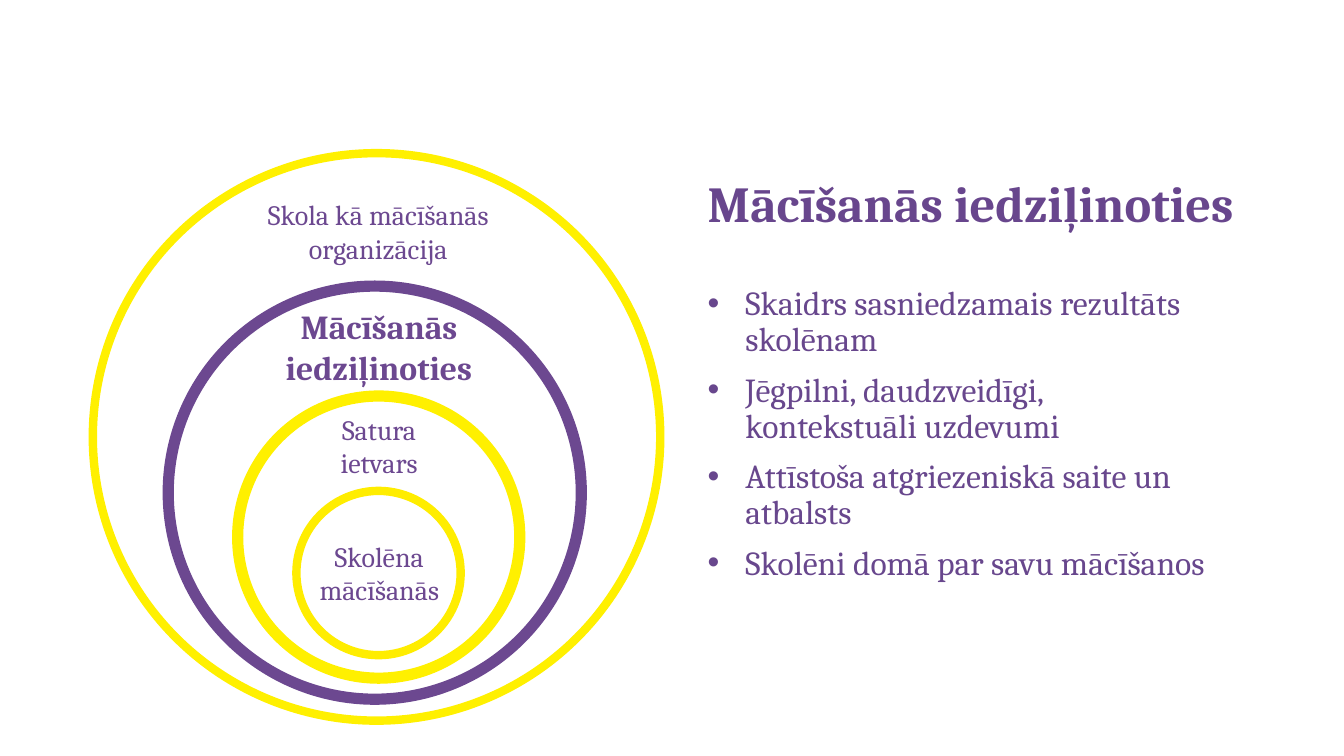
from pptx import Presentation
from pptx.dml.color import RGBColor
from pptx.enum.shapes import MSO_SHAPE
from pptx.enum.text import MSO_ANCHOR, MSO_AUTO_SIZE, PP_ALIGN
from pptx.oxml import parse_xml
from pptx.oxml.ns import nsdecls
from pptx.util import Cm, Pt

OVAL = MSO_SHAPE.OVAL
TOP = MSO_ANCHOR.TOP
NO_FIT = MSO_AUTO_SIZE.NONE
LEFT, CENTER = PP_ALIGN.LEFT, PP_ALIGN.CENTER

# Content
FONT = "Cambria"
TITLE_COLOR, BODY_COLOR, PURPLE = "68468D", "68478D", "6C4890"
YELLOW, DARK_YELLOW = "FFF000", "FFED00"
TITLE = "Mācīšanās iedziļinoties"
BULLETS = [
    "Skaidrs sasniedzamais rezultāts skolēnam",
    "Jēgpilni, daudzveidīgi, kontekstuāli uzdevumi",
    "Attīstoša atgriezeniskā saite un atbalsts",
    "Skolēni domā par savu mācīšanos",
]
# Circles: left, top, diameter (cm), line colour, line width (pt)
CIRCLES = [
    (2.34, 3.86, 14.3, YELLOW, 6),
    (4.24, 7.21, 10.41, PURPLE, 8),
    (5.99, 9.98, 7.11, YELLOW, 8),
    (7.47, 12.37, 4.14, DARK_YELLOW, 6),
]
# Labels: paragraphs, left, top, width, height (cm), size (pt), bold
LABELS = [
    (["Skola kā mācīšanās organizācija"], 6.07, 4.85, 6.93, 1.96, 20, False),
    (["Mācīšanās iedziļinoties"], 6.83, 7.59, 5.44, 2.31, 24, True),
    (["Satura ietvars"], 7.75, 10.26, 3.61, 1.96, 20, False),
    (["Skolēna", "mācīšanās"], 7.26, 13.46, 4.6, 1.96, 20, False),
]


def rgb(color):
    return RGBColor.from_string(color)


def place(shape, left, top, width, height):
    shape.left, shape.top = Cm(left), Cm(top)
    shape.width, shape.height = Cm(width), Cm(height)


def write(shape, texts, size, color, bold=False, align=LEFT, spacing=1.0, gap=0, bullet=False):
    frame = shape.text_frame
    frame.word_wrap = True
    frame.auto_size = NO_FIT
    frame.vertical_anchor = TOP
    for index, text in enumerate(texts):
        paragraph = frame.add_paragraph() if index else frame.paragraphs[0]
        paragraph.alignment = align
        paragraph.line_spacing = spacing
        paragraph.space_before = Pt(gap if index else 0)
        if bullet:
            properties = paragraph._p.get_or_add_pPr()
            properties.set("marL", str(Cm(0.95)))
            properties.set("indent", str(-Cm(0.95)))
            for tag in ('buFont %s typeface="Arial"', 'buChar %s char="•"'):
                properties.append(parse_xml("<a:" + tag % nsdecls("a") + "/>"))
        run = paragraph.add_run()
        run.text = text
        run.font.name = FONT
        run.font.size = Pt(size)
        run.font.bold = bold
        run.font.color.rgb = rgb(color)


def main():
    presentation = Presentation()
    presentation.slide_width, presentation.slide_height = Cm(33.87), Cm(19.05)
    slide = presentation.slides.add_slide(presentation.slide_layouts[1])

    # Title and bullet list
    title, body = slide.placeholders
    place(title, 17.58, 4.39, 14.53, 2.31)
    write(title, [TITLE], 36, TITLE_COLOR, bold=True, spacing=0.9)
    place(body, 17.58, 7.09, 13.41, 10.16)
    write(body, BULLETS, 24, BODY_COLOR, spacing=0.9, gap=10, bullet=True)

    # Nested circles
    for left, top, diameter, color, width in CIRCLES:
        circle = slide.shapes.add_shape(OVAL, Cm(left), Cm(top), Cm(diameter), Cm(diameter))
        circle.shadow.inherit = False
        circle.fill.background()
        circle.line.color.rgb = rgb(color)
        circle.line.width = Pt(width)

    # Circle labels
    for texts, left, top, width, height, size, bold in LABELS:
        label = slide.shapes.add_textbox(Cm(left), Cm(top), Cm(width), Cm(height))
        write(label, texts, size, PURPLE, bold=bold, align=CENTER)

    presentation.save("out.pptx")


if __name__ == "__main__":
    main()
